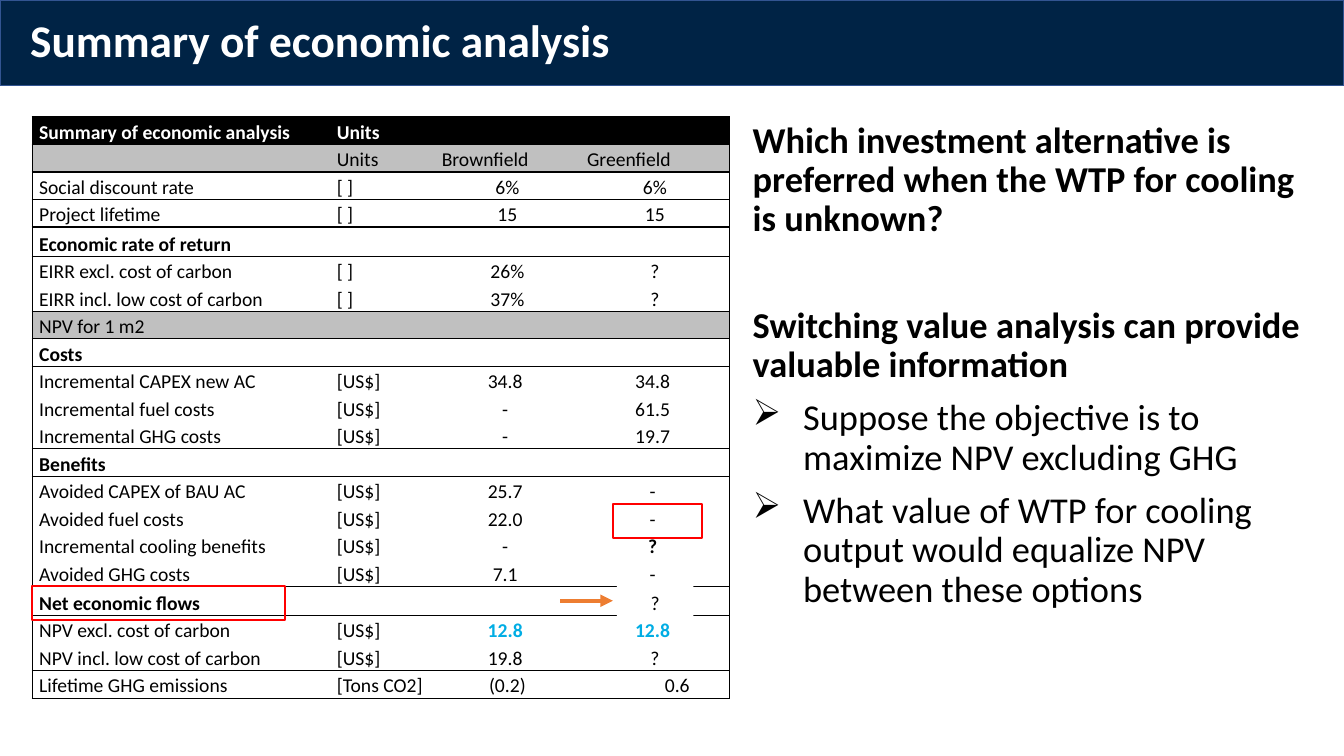
"""Build the slide that sums up the economic analysis."""
from lxml import etree
from pptx import Presentation
from pptx.dml.color import RGBColor
from pptx.enum.shapes import MSO_CONNECTOR, MSO_SHAPE
from pptx.enum.text import MSO_ANCHOR, MSO_AUTO_SIZE, PP_ALIGN
from pptx.oxml.ns import qn
from pptx.util import Pt

RECT, LINE = MSO_SHAPE.RECTANGLE, MSO_CONNECTOR.STRAIGHT
LEFT, MID, RIGHT = PP_ALIGN.LEFT, PP_ALIGN.CENTER, PP_ALIGN.RIGHT
HUES = {
    "navy": "002345", "edge": "325491", "white": "FFFFFF", "black": "000000",
    "grey": "C0C0C0", "cyan": "00ADE4", "red": "FF0000", "orange": "ED7D31",
}
FONT = "Calibri"
NO_GRID = "{2D5ABB26-0587-4C30-8999-92F81FD0307C}"


def rgb(hue):
    return RGBColor.from_string(HUES[hue])


def add_run(para, text, size, hue="black", bold=False):
    run = para.add_run()
    run.text = text
    run.font.name = FONT
    run.font.size = Pt(size)
    run.font.bold = bold
    run.font.color.rgb = rgb(hue)


prs = Presentation()
prs.slide_width, prs.slide_height = Pt(960), Pt(540)
slide = prs.slides.add_slide(prs.slide_layouts[5])
shapes = slide.shapes

title = shapes.title
title.left, title.top, title.width, title.height = Pt(0), Pt(0), Pt(960), Pt(61)
title.fill.solid()
title.fill.fore_color.rgb = rgb("navy")
title.line.color.rgb = rgb("edge")
title.line.width = Pt(1)
frame = title.text_frame
frame.auto_size = MSO_AUTO_SIZE.NONE
frame.vertical_anchor = MSO_ANCHOR.MIDDLE
frame.margin_left = frame.margin_right = Pt(7.2)
frame.margin_top = frame.margin_bottom = Pt(14.4)
para = frame.paragraphs[0]
para.alignment = LEFT
para.line_spacing = 0.9
para._p.get_or_add_pPr().set("marL", str(Pt(14.4)))
add_run(para, "Summary of economic analysis", 32.4, "white", True)

ROWS = [
    ("Summary of economic analysis", "Units", "", ""),
    ("", "Units", "Brownfield", "Greenfield"),
    ("Social discount rate", "[ ]", "6%", "6%"),
    ("Project lifetime", "[ ]", "15", "15"),
    ("Economic rate of return", "", "", ""),
    ("EIRR excl. cost of carbon", "[ ]", "26%", "?"),
    ("EIRR incl. low cost of carbon", "[ ]", "37%", "?"),
    ("NPV for 1 m2", "", "", ""),
    ("Costs", "", "", ""),
    ("Incremental CAPEX new AC", "[US$]", "34.8 ", "34.8 "),
    ("Incremental fuel costs", "[US$]", "- ", "61.5 "),
    ("Incremental GHG costs", "[US$]", "- ", "19.7 "),
    ("Benefits", "", "", ""),
    ("Avoided CAPEX of BAU AC", "[US$]", "25.7 ", "- "),
    ("Avoided fuel costs", "[US$]", "22.0 ", "- "),
    ("Incremental cooling benefits", "[US$]", "- ", "? "),
    ("Avoided GHG costs", "[US$]", "7.1 ", "- "),
    ("Net economic flows", "", "", ""),
    ("NPV excl. cost of carbon", "[US$]", "12.8 ", "12.8 "),
    ("NPV incl. low cost of carbon", "[US$]", "19.8 ", "?"),
    ("Lifetime GHG emissions", "[Tons CO2]", "(0.2)", "0.6"),
]
WIDTHS = [212.6, 75, 103.8, 106.8]
FILLS = {0: "black", 1: "grey", 7: "grey"}
RULES = {0, 1, 2, 4, 7, 8, 12, 17, 20, len(ROWS)}
TALL = {4, 17}
BOLD = {(0, 0), (0, 1), (4, 0), (8, 0), (12, 0), (15, 3), (17, 0), (18, 2), (18, 3)}
CYAN = {(18, 2), (18, 3)}
LAST = (20, 3)

grid = shapes.add_table(len(ROWS), 4, Pt(23), Pt(83.5), Pt(498.2), Pt(415)).table
grid.first_row = grid.horz_banding = False
grid._tbl.tblPr[0].text = NO_GRID
for col, width in zip(grid.columns, WIDTHS):
    col.width = Pt(width)

for r, row in enumerate(ROWS):
    grid.rows[r].height = Pt(21 if r in TALL else 19.65)
    for c, text in enumerate(row):
        cell = grid.cell(r, c)
        cell.vertical_anchor = MSO_ANCHOR.BOTTOM
        cell.margin_left = cell.margin_right = Pt(5)
        cell.margin_top = cell.margin_bottom = Pt(0)
        para = cell.text_frame.paragraphs[0]
        para.line_spacing = 1.15
        para.alignment = MID if r > 1 and c > 1 else LEFT
        if (r, c) == LAST:
            para.alignment = RIGHT
            cell.margin_right = Pt(28.5)
        if text:
            hue = "white" if r == 0 else "cyan" if (r, c) in CYAN else "black"
            add_run(para, text, 14, hue, (r, c) in BOLD)
        else:
            etree.SubElement(para._p, qn("a:endParaRPr"), sz="1400")
        props = cell._tc.get_or_add_tcPr()
        sides = {"L": c == 0, "R": c == 3, "T": r in RULES, "B": r + 1 in RULES}
        for side, shown in sides.items():
            if shown:
                edge = etree.SubElement(props, qn("a:ln" + side), w=str(Pt(1)))
                paint = etree.SubElement(edge, qn("a:solidFill"))
                etree.SubElement(paint, qn("a:srgbClr"), val=HUES["black"])
        if r in FILLS:
            cell.fill.solid()
            cell.fill.fore_color.rgb = rgb(FILLS[r])
        else:
            cell.fill.background()

POINTS = [
    ("Which investment alternative is preferred when the WTP for cooling is unknown?", True, 10),
    ("Switching value analysis can provide valuable information", True, 48),
    ("Suppose the objective is to maximize NPV excluding GHG", False, 10),
    ("What value of WTP for cooling output would equalize NPV between these options", False, 10),
]
frame = shapes.add_textbox(Pt(530.6), Pt(83.5), Pt(414.7), Pt(456.5)).text_frame
frame.word_wrap = True
for i, (text, head, gap) in enumerate(POINTS):
    para = frame.add_paragraph() if i else frame.paragraphs[0]
    para.line_spacing = 0.9
    para.space_before = Pt(gap)
    add_run(para, text, 26, bold=head)
    if not head:
        props = para._p.get_or_add_pPr()
        props.set("marL", str(Pt(36)))
        props.set("indent", str(Pt(-36)))
        etree.SubElement(props, qn("a:buChar"), char="➢")

BOXES = [
    (440.6, 418.3, 54.7, "white", None, "?"),
    (437.8, 360, 63.4, None, "red", ""),
    (23, 418.3, 180.7, None, "red", ""),
]
for left, top, width, fill, line, text in BOXES:
    box = shapes.add_shape(RECT, Pt(left), Pt(top), Pt(width), Pt(24.5))
    box.shadow.inherit = False
    if fill:
        box.fill.solid()
        box.fill.fore_color.rgb = rgb(fill)
    else:
        box.fill.background()
    if line:
        box.line.color.rgb = rgb(line)
        box.line.width = Pt(1.5)
    else:
        box.line.fill.background()
    if text:
        para = box.text_frame.paragraphs[0]
        para.alignment = MID
        add_run(para, text, 14)

arrow = shapes.add_connector(LINE, Pt(400.3), Pt(429.1), Pt(437.8), Pt(429.1))
arrow.line.color.rgb = rgb("orange")
arrow.line.width = Pt(3)
etree.SubElement(arrow.line._get_or_add_ln(), qn("a:tailEnd"), type="triangle")
etree.SubElement(arrow._element.spPr, qn("a:effectLst"))

prs.save("out.pptx")
